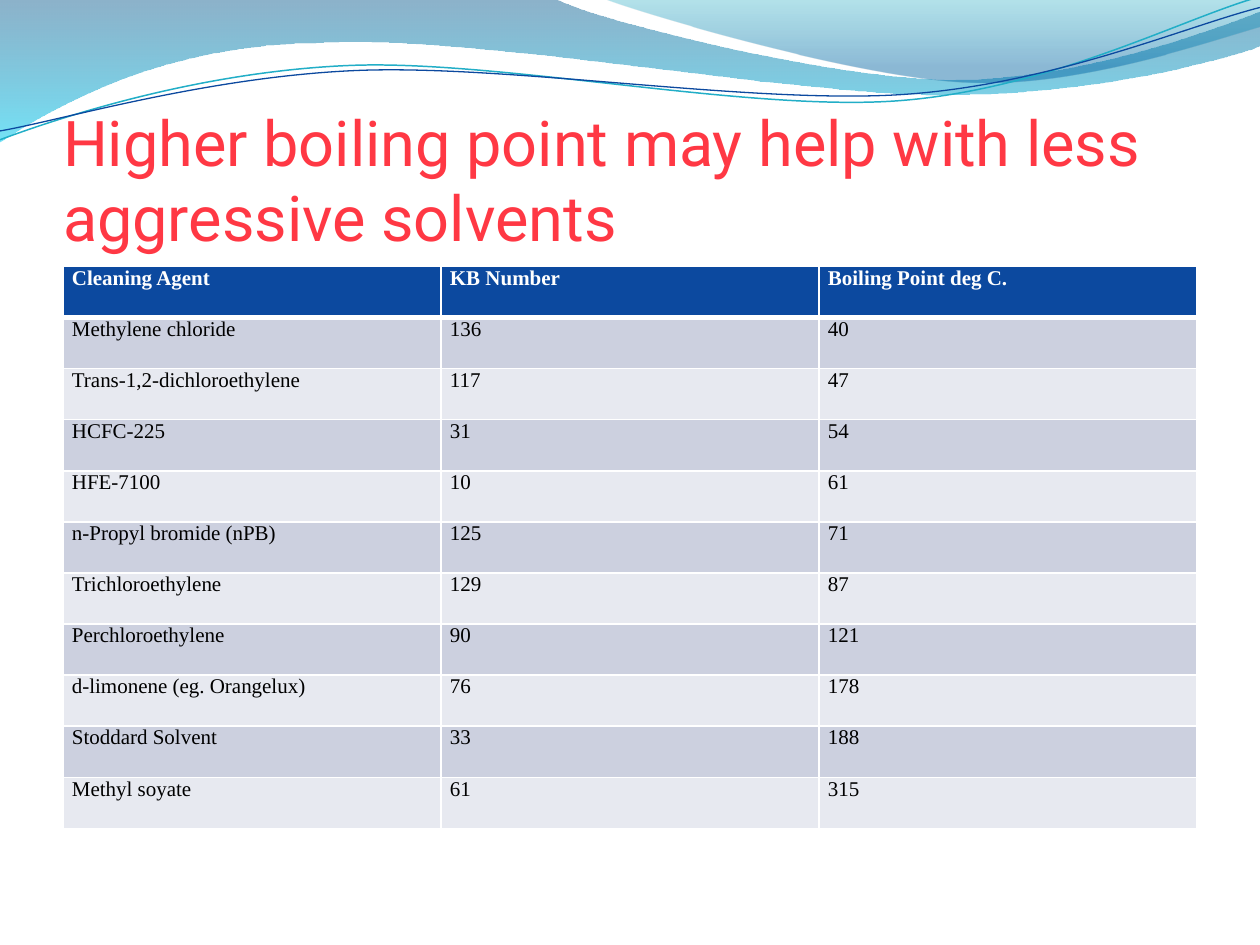
from dataclasses import dataclass
from math import cos, radians, sin

from lxml.etree import SubElement
from pptx import Presentation
from pptx.dml.color import RGBColor
from pptx.enum.text import MSO_ANCHOR, MSO_AUTO_SIZE, PP_ALIGN
from pptx.oxml import parse_xml
from pptx.oxml.ns import nsdecls, qn
from pptx.util import Cm, Pt


@dataclass(frozen=True)
class Theme:
    title_font: str = "Roboto"
    table_font: str = "Times New Roman"
    title_size: float = 36
    table_size: float = 12
    title_color: str = "FF3844"
    header_fill: str = "0C499F"
    header_text: str = "FFFFFF"
    body_text: str = "000000"
    bands: tuple = ("CCD0DF", "E7E9F0")
    border: str = "FFFFFF"
    teal_line: str = "22AEC7"
    blue_line: str = "0C499F"
    # Gradient stops from top to bottom: position, colour, opacity in percent
    left_wave: tuple = ((0, "00558A", 45), (1, "00CBF0", 55))
    right_wave: tuple = ((0, "08A0BC", 30), (0.8, "0065A4", 45))


GRID = Cm(2.54)  # one unit of the wave coordinates
CURVE_TILT = -2.7  # degrees

# Each outline is a start point, then segments: one point is a straight line,
# three points are the two controls and the end of a Bézier curve.
LEFT_WAVE = [
    [(0, -0.01)], [(4.4, -0.01)],
    [(4.76, 0.17), (6.64, 0.63), (7.58, 0.63)],
    [(8.53, 0.63), (9.58, 0.26), (10, 0.09)],
    [(10.01, 0.36)],
    [(9.83, 0.44), (8.7, 0.76), (7.46, 0.75)],
    [(6.22, 0.75), (3.82, 0.28), (2.57, 0.34)],
    [(1.29, 0.35), (0.46, 0.83), (-0.01, 1.13)],
]
RIGHT_WAVE = [
    [(4.79, -0.01)],
    [(5.09, 0.11), (6.82, 0.62), (7.69, 0.65)],
    [(8.56, 0.69), (9.61, 0.32), (10, 0.21)],
    [(10, 0)],
]
TEAL_CURVE = [
    [(0, 1.11)],
    [(0.48, 0.93), (1.58, 0.57), (2.77, 0.52)],
    [(3.95, 0.47), (5.93, 0.89), (7.13, 0.8)],
    [(8.33, 0.71), (9.38, 0.15), (9.98, -0.02)],
]
BLUE_CURVE = [
    [(0, 1.04)],
    [(0.47, 0.96), (1.64, 0.61), (2.83, 0.56)],
    [(4.03, 0.51), (5.97, 0.83), (7.17, 0.75)],
    [(8.36, 0.67), (9.41, 0.21), (10, 0.06)],
]

SOLVENTS = [
    ("Cleaning Agent", "KB Number", "Boiling Point deg C."),
    ("Methylene chloride", "136", "40"),
    ("Trans-1,2-dichloroethylene", "117", "47"),
    ("HCFC-225", "31", "54"),
    ("HFE-7100", "10", "61"),
    ("n-Propyl bromide (nPB)", "125", "71"),
    ("Trichloroethylene", "129", "87"),
    ("Perchloroethylene", "90", "121"),
    ("d-limonene (eg. Orangelux)", "76", "178"),
    ("Stoddard Solvent", "33", "188"),
    ("Methyl soyate", "61", "315"),
]


def write(frame, text, *, font, size, color, bold=False, align=PP_ALIGN.LEFT):
    paragraph = frame.paragraphs[0]
    paragraph.alignment = align
    run = paragraph.add_run()
    run.text = text
    run.font.name = font
    run.font.size = Pt(size)
    run.font.bold = bold
    run.font.color.rgb = RGBColor.from_string(color)


def turn(outline, degrees):
    """Rotate an outline about the point halfway between its two ends."""
    (x1, y1), (x2, y2) = outline[0][-1], outline[-1][-1]
    center_x, center_y = (x1 + x2) / 2, (y1 + y2) / 2
    c, s = cos(radians(degrees)), sin(radians(degrees))
    return [[(center_x + (x - center_x) * c - (y - center_y) * s,
              center_y + (x - center_x) * s + (y - center_y) * c)
             for x, y in segment] for segment in outline]


def set_borders(cell, color, top, bottom, side=1):
    properties = cell._tc.get_or_add_tcPr()
    widths = {"lnL": side, "lnR": side, "lnT": top, "lnB": bottom}
    for index, (tag, width) in enumerate(widths.items()):
        properties.insert(index, parse_xml(
            f'<a:{tag} {nsdecls("a")} w="{Pt(width)}"><a:solidFill>'
            f'<a:srgbClr val="{color}"/></a:solidFill></a:{tag}>'))


class SlideBuilder:
    def __init__(self, presentation, theme):
        self.theme = theme
        layout = presentation.slide_layouts.get_by_name("Title Only")
        self.slide = presentation.slides.add_slide(layout)

    def freeform(self, outline, close):
        """Build the outline from its end points, then bend the curved segments."""
        outline = [[(round(x * GRID), round(y * GRID)) for x, y in segment]
                   for segment in outline]
        start, *ends = [segment[-1] for segment in outline]
        builder = self.slide.shapes.build_freeform(*start)
        builder.add_line_segments(ends, close=close)
        shape = builder.convert_to_shape()
        shape.shadow.inherit = False
        lines = list(shape.element.iter(qn("a:lnTo")))
        for line, segment in zip(lines, outline[1:]):
            if len(segment) == 3:
                line.addprevious(parse_xml(
                    f'<a:cubicBezTo {nsdecls("a")}>' + "".join(
                        f'<a:pt x="{x - shape.left}" y="{y - shape.top}"/>'
                        for x, y in segment) + "</a:cubicBezTo>"))
                line.getparent().remove(line)
        return shape

    def wave(self, outline, stops):
        shape = self.freeform(outline, close=True)
        shape.line.fill.background()
        shape.fill.gradient()
        shape.fill.gradient_angle = 270
        for stop, (position, color, _) in zip(shape.fill.gradient_stops, stops):
            stop.position = position
            stop.color.rgb = RGBColor.from_string(color)
        colors = shape.element.spPr.iter(qn("a:srgbClr"))
        for element, (_, _, opacity) in zip(list(colors), stops):
            SubElement(element, qn("a:alpha")).set("val", str(opacity * 1000))

    def curve(self, outline, color, width):
        shape = self.freeform(turn(outline, -CURVE_TILT), close=False)
        shape.rotation = CURVE_TILT
        shape.fill.background()
        shape.line.color.rgb = RGBColor.from_string(color)
        shape.line.width = Pt(width)

    def title(self, text, left, top, width, height):
        """Fill the title placeholder and bring it in front of the waves."""
        title = self.slide.shapes.title
        title.left, title.top, title.width, title.height = left, top, width, height
        frame = title.text_frame
        frame.word_wrap = True
        frame.auto_size = MSO_AUTO_SIZE.NONE
        frame.vertical_anchor = MSO_ANCHOR.BOTTOM
        frame.margin_left = frame.margin_right = frame.margin_bottom = 0
        frame.margin_top = Cm(0.13)
        write(frame, text, font=self.theme.title_font,
              size=self.theme.title_size, color=self.theme.title_color)
        title.element.getparent().append(title.element)

    def table(self, rows, left, top, column_width, row_height):
        theme = self.theme
        columns = len(rows[0])
        table = self.slide.shapes.add_table(
            len(rows), columns, left, top,
            column_width * columns, row_height * len(rows)).table
        table.horz_banding = False
        for row, values in enumerate(rows):
            header = row == 0
            fill = theme.header_fill if header else theme.bands[(row - 1) % 2]
            for column, value in enumerate(values):
                cell = table.cell(row, column)
                cell.margin_left = cell.margin_right = Cm(0.18)
                cell.margin_top = cell.margin_bottom = 0
                cell.fill.solid()
                cell.fill.fore_color.rgb = RGBColor.from_string(fill)
                set_borders(cell, theme.border, top=3 if row == 1 else 1,
                            bottom=3 if header else 1)
                write(cell.text_frame, value, font=theme.table_font,
                      size=theme.table_size, bold=header,
                      color=theme.header_text if header else theme.body_text)


def main():
    presentation = Presentation()
    presentation.slide_width, presentation.slide_height = Cm(25.4), Cm(19.05)
    theme = Theme()
    builder = SlideBuilder(presentation, theme)
    builder.wave(LEFT_WAVE, theme.left_wave)
    builder.wave(RIGHT_WAVE, theme.right_wave)
    builder.curve(TEAL_CURVE, theme.teal_line, 0.85)
    builder.curve(BLUE_CURVE, theme.blue_line, 0.75)
    builder.title("Higher boiling point may help with less aggressive solvents",
                  Cm(1.27), Cm(1.95), Cm(22.86), Cm(3.18))
    builder.table(SOLVENTS, Cm(1.27), Cm(5.37), Cm(7.62), Cm(1.03))
    presentation.save("out.pptx")


if __name__ == "__main__":
    main()
